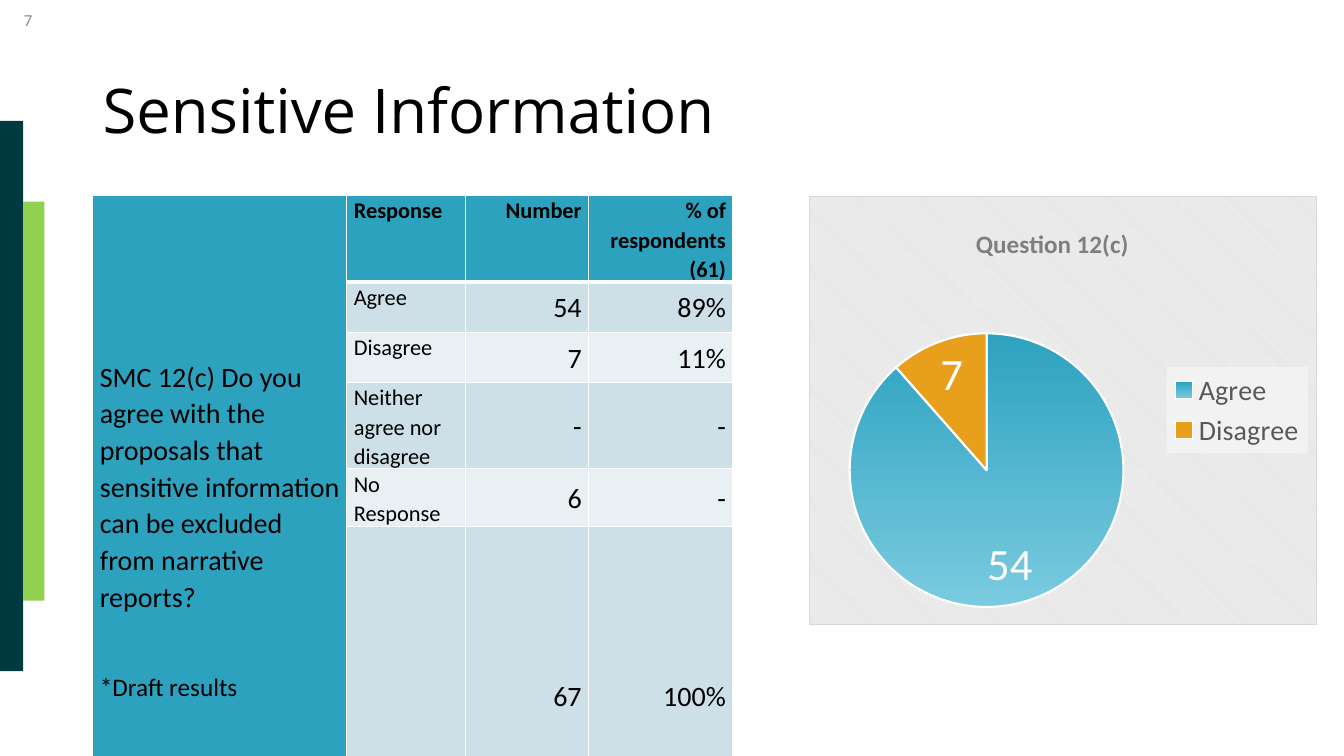
from lxml import etree
from pptx import Presentation
from pptx.chart.data import CategoryChartData
from pptx.dml.color import RGBColor
from pptx.enum.chart import XL_CHART_TYPE as ChartType
from pptx.enum.chart import XL_LABEL_POSITION as LabelPos
from pptx.enum.chart import XL_LEGEND_POSITION as LegendPos
from pptx.enum.shapes import MSO_SHAPE as Shape
from pptx.enum.text import MSO_ANCHOR as Anchor
from pptx.enum.text import PP_ALIGN as Align
from pptx.oxml import parse_xml
from pptx.oxml.ns import qn
from pptx.util import Inches, Pt

# Content
TITLE = "Sensitive Information"
PAGE = "7"
QUESTION = ("SMC 12(c) Do you agree with the proposals that sensitive "
            "information can be excluded from narrative reports?")
FOOTNOTE = "*Draft results"
HEADER = ("Response", "Number", "% of respondents (61)")
RESPONSES = [
    ("Agree", "54", "89%"),
    ("Disagree", "7", "11%"),
    ("Neither agree nor disagree", "-", "-"),
    ("No Response", "6", "-"),
    ("", "67", "100%"),
]
COLUMNS = (2.52, 1.18, 1.22, 1.43)
ROWS = (0.84, 0.5, 0.5, 0.84, 0.5, 1.09)
CHART_TITLE = "Question 12(c)"
ANSWERS = {"Agree": 54, "Disagree": 7}
SIDE_BARS = [(0, 1.2, 0.23, 5.46, "003A40"), (0.23, 2, 0.21, 3.96, "92D050")]

TEAL, LIGHT_TEAL, ORANGE = "2DA2BF", "7ACBE0", "E8A01C"
BANDS = ("CDE0E8", "E8F0F4")
WHITE, BLACK = "FFFFFF", "000000"
NS_A = 'xmlns:a="http://schemas.openxmlformats.org/drawingml/2006/main"'
NS_C = 'xmlns:c="http://schemas.openxmlformats.org/drawingml/2006/chart"'


def rgb(hex_color):
    return RGBColor.from_string(hex_color)


def style(font, size, color=BLACK, face="Calibri", bold=False):
    font.size, font.name, font.bold = Pt(size), face, bold
    font.color.rgb = rgb(color)


def box_text(text, left, top, width, height, size, color, face, align):
    frame = slide.shapes.add_textbox(*map(Inches, (left, top, width, height))).text_frame
    frame.word_wrap = True
    frame.vertical_anchor = Anchor.MIDDLE
    paragraph = frame.paragraphs[0]
    paragraph.alignment = align
    run = paragraph.add_run()
    run.text = text
    style(run.font, size, color, face)
    return paragraph


def fill_cell(cell, lines, fill, align=Align.LEFT, anchor=Anchor.TOP, bold=False, bottom=1):
    """Each line is (text, size, space after)."""
    cell.margin_left = cell.margin_right = Inches(0.07)
    cell.margin_top = cell.margin_bottom = 0
    cell.vertical_anchor = anchor
    cell.fill.solid()
    cell.fill.fore_color.rgb = rgb(fill)
    for index, (text, size, after) in enumerate(lines):
        frame = cell.text_frame
        paragraph = frame.add_paragraph() if index else frame.paragraphs[0]
        paragraph.alignment = align
        paragraph.line_spacing, paragraph.space_after = 1.07, Pt(after)
        if text:
            run = paragraph.add_run()
            run.text = text
            style(run.font, size, bold=bold)
    borders = (("lnL", 1), ("lnR", 1), ("lnT", 1), ("lnB", bottom))
    for index, (side, points) in enumerate(borders):
        cell._tc.tcPr.insert(index, parse_xml(
            f'<a:{side} {NS_A} w="{Pt(points)}"><a:solidFill>'
            f'<a:srgbClr val="{WHITE}"/></a:solidFill></a:{side}>'))


def manual_layout(x, y, width=None, height=None):
    target = '<c:layoutTarget val="inner"/>' if width else ""
    size = f'<c:w val="{width}"/><c:h val="{height}"/>' if width else ""
    return parse_xml(
        f'<c:layout {NS_C}><c:manualLayout>{target}<c:xMode val="edge"/>'
        f'<c:yMode val="edge"/><c:x val="{x}"/><c:y val="{y}"/>{size}'
        '</c:manualLayout></c:layout>')


deck = Presentation()
deck.slide_width, deck.slide_height = Inches(13.33), Inches(7.5)
slide = deck.slides.add_slide(deck.slide_layouts[6])

# Side bars, title and page number
for *place, color in SIDE_BARS:
    bar = slide.shapes.add_shape(Shape.RECTANGLE, *map(Inches, place))
    bar.shadow.inherit = False
    bar.fill.solid()
    bar.fill.fore_color.rgb = rgb(color)
    bar.line.fill.background()
heading = box_text(TITLE, 0.92, 0.4, 11.5, 1.45, 44, BLACK, "Open Sans", Align.LEFT)
heading.line_spacing = 0.9
box_text(PAGE, 0, 0, 0.42, 0.4, 12, "8C8C8C", "Calibri", Align.RIGHT)

# Response table
table = slide.shapes.add_table(
    len(ROWS), len(COLUMNS), Inches(0.92), Inches(1.94),
    Inches(sum(COLUMNS)), Inches(sum(ROWS))).table
for column, width in zip(table.columns, COLUMNS):
    column.width = Inches(width)
for row, height in zip(table.rows, ROWS):
    row.height = Inches(height)
table.cell(0, 0).merge(table.cell(len(ROWS) - 1, 0))
fill_cell(table.cell(0, 0), [(QUESTION, 20, 39.5), (FOOTNOTE, 18, 8)], TEAL,
          anchor=Anchor.MIDDLE, bottom=3)
for r, texts in enumerate([HEADER] + RESPONSES):
    for c, text in enumerate(texts):
        is_header, is_label = r == 0, c == 0
        fill_cell(
            table.cell(r, c + 1),
            [(text, 16 if is_header or is_label else 20, 8)],
            TEAL if is_header else BANDS[(r - 1) % 2],
            Align.LEFT if is_label else Align.RIGHT,
            Anchor.TOP if is_header or is_label else Anchor.MIDDLE,
            is_header, 3 if is_header else 1)

# Pie chart
answers = CategoryChartData()
answers.categories = list(ANSWERS)
answers.add_series("Series 1", list(ANSWERS.values()))
chart = slide.shapes.add_chart(
    ChartType.PIE, *map(Inches, (8.02, 1.94, 5.04, 4.26)), answers).chart
style(chart.font, 10)
chart.has_title = True
caption = chart.chart_title.text_frame.paragraphs[0].add_run()
caption.text = CHART_TITLE
style(caption.font, 18, "7F7F7F", bold=True)
chart_title = chart.chart_title._element
for old in chart_title.findall(qn("c:layout")):
    chart_title.remove(old)
chart_title.find(qn("c:tx")).addnext(manual_layout(0.32, 0.06))

chart.has_legend = True
chart.legend.position = LegendPos.RIGHT
chart.legend.include_in_layout = False
style(chart.legend.font, 20, "595959")
chart.legend._element.find(qn("c:txPr")).addprevious(parse_xml(
    f'<c:spPr {NS_C} {NS_A}><a:solidFill><a:srgbClr val="{WHITE}">'
    '<a:alpha val="40000"/></a:srgbClr></a:solidFill></c:spPr>'))

pie = chart.plots[0]
pie.vary_by_categories = True
slices = [pie.series[0].points[i].format for i in range(len(ANSWERS))]
agree, disagree = slices
agree.fill.gradient()
agree.fill.gradient_angle = 270
for stop, color in zip(agree.fill.gradient_stops, (TEAL, LIGHT_TEAL)):
    stop.color.rgb = rgb(color)
disagree.fill.solid()
disagree.fill.fore_color.rgb = rgb(ORANGE)
for piece in slices:
    piece.line.color.rgb = rgb(WHITE)
    piece.line.width = Pt(1.5)
pie.has_data_labels = True
labels = pie.data_labels
labels.show_value, labels.show_percentage = True, False
labels.position = LabelPos.INSIDE_END
style(labels.font, 32, WHITE)

# Plot position and chart background
plot_area = chart._chartSpace.chart.plotArea
for old in plot_area.findall(qn("c:layout")):
    plot_area.remove(old)
plot_area.insert(0, manual_layout(0.08, 0.32, 0.54, 0.64))
chart._chartSpace.chart.addnext(parse_xml(
    f'<c:spPr {NS_C} {NS_A}><a:pattFill prst="dkDnDiag">'
    f'<a:fgClr><a:srgbClr val="{WHITE}"/></a:fgClr>'
    '<a:bgClr><a:srgbClr val="E6E6E6"/></a:bgClr></a:pattFill>'
    f'<a:ln w="{Pt(0.75)}"><a:solidFill><a:srgbClr val="D9D9D9"/>'
    '</a:solidFill></a:ln></c:spPr>'))

deck.save("out.pptx")
